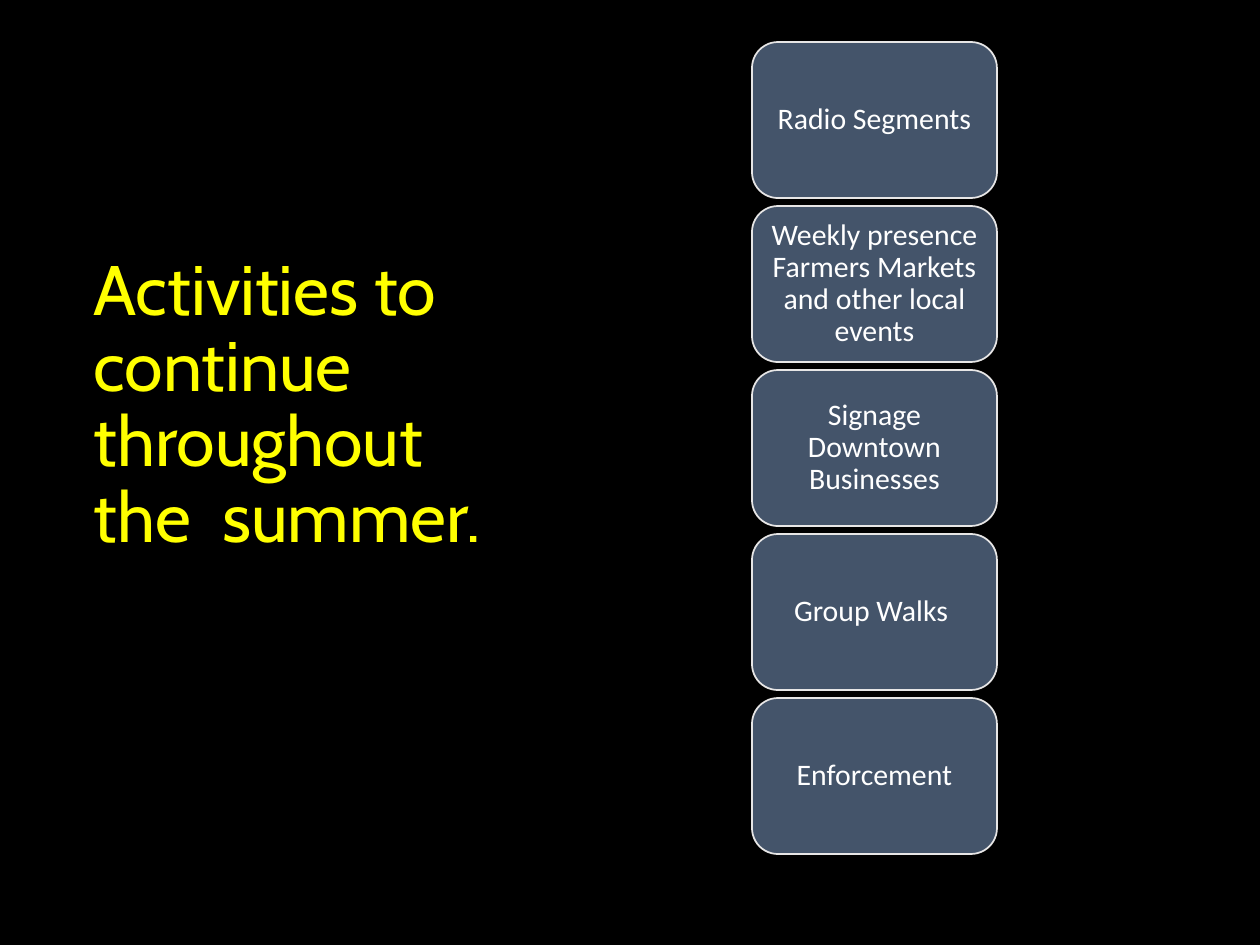
from pptx import Presentation
from pptx.dml.color import RGBColor
from pptx.enum.shapes import MSO_SHAPE
from pptx.enum.text import MSO_ANCHOR, MSO_AUTO_SIZE, PP_ALIGN
from pptx.util import Pt

PX = 914400 // 126  # EMU per px
COLORS = {
    "bg": "000000",
    "title": "FFFF00",
    "box": "44546A",
    "outline": "E7E6E6",
    "text": "FFFFFF",
}


def rgb(name):
    return RGBColor.from_string(COLORS[name])


def format_text(tf, frame, align, font, color):
    for name, value in frame.items():
        setattr(tf, name, value)
    for p in tf.paragraphs:
        p.alignment = align
        p.line_spacing = 0.9
        for r in p.runs:
            for name, value in font.items():
                setattr(r.font, name, value)
            r.font.color.rgb = rgb(color)


prs = Presentation()
prs.slide_width, prs.slide_height = 1260 * PX, 945 * PX
s = prs.slides.add_slide(prs.slide_layouts[5])
s.background.fill.solid()
s.background.fill.fore_color.rgb = rgb("bg")

# Title, raised above the middle by a deep bottom inset
title = s.shapes.title
title.left, title.top, title.width, title.height = 81 * PX, 86 * PX, 435 * PX, 724 * PX
title.text_frame.text = "Activities to \vcontinue throughout the  summer."
title_frame = {
    "word_wrap": True,
    "auto_size": MSO_AUTO_SIZE.NONE,
    "vertical_anchor": MSO_ANCHOR.MIDDLE,
    "margin_bottom": 90 * PX,
}
format_text(title.text_frame, title_frame, PP_ALIGN.LEFT,
            {"name": "Cabin", "size": Pt(40)}, "title")

# Column of activities
activities = [
    "Radio Segments",
    "Weekly presence Farmers Markets and other local events",
    "Signage Downtown Businesses",
    "Group Walks ",
    "Enforcement",
]
box_frame = {
    "word_wrap": True,
    "vertical_anchor": MSO_ANCHOR.MIDDLE,
    "margin_left": 8 * PX,
    "margin_right": 8 * PX,
    "margin_top": 5 * PX,
    "margin_bottom": 5 * PX,
}
LEFT, TOP, WIDTH, HEIGHT, GAP = 752, 42, 245, 156, 8
for i, activity in enumerate(activities):
    top = TOP + i * (HEIGHT + GAP)
    sp = s.shapes.add_shape(MSO_SHAPE.ROUNDED_RECTANGLE,
                            LEFT * PX, top * PX, WIDTH * PX, HEIGHT * PX)
    sp.shadow.inherit = False
    sp.fill.solid()
    sp.fill.fore_color.rgb = rgb("box")
    sp.line.color.rgb = rgb("outline")
    sp.line.width = Pt(1)
    sp.text_frame.text = activity
    format_text(sp.text_frame, box_frame, PP_ALIGN.CENTER,
                {"name": "Calibri", "size": Pt(17)}, "text")

prs.save("out.pptx")
